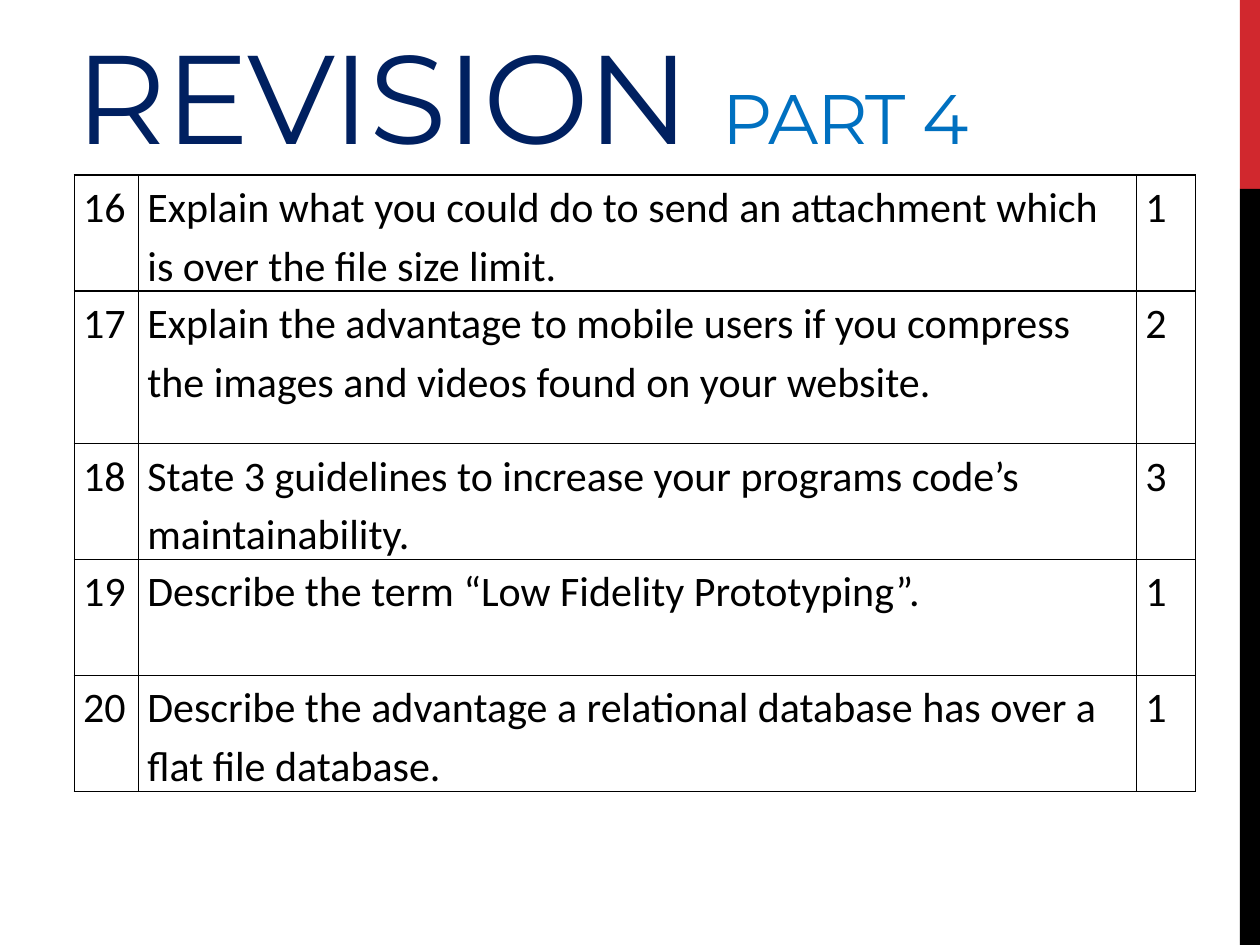
"""Build the fourth revision slide: a title, a side band and a question table."""
from typing import NamedTuple

from lxml import etree
from pptx import Presentation
from pptx import util as u
from pptx.dml.color import RGBColor
from pptx.enum import shapes, text
from pptx.oxml import ns

HUES = {"navy": "002060", "blue": "0070C0", "red": "D1282E", "black": "000000"}
WIDE, HIGH = u.Inches(10), u.Inches(7.5)
EDGE = 0.984
COLS = (0.51, 7.92, 0.47)
ROW = 0.92


class Band(NamedTuple):
    top: float
    share: float
    hue: str


class Part(NamedTuple):
    words: str
    size: int
    hue: str


class Task(NamedTuple):
    num: int
    words: str
    marks: int
    high: float = ROW


BANDS = (Band(0, 0.2, "red"), Band(0.2, 0.8, "black"))
TITLE = (Part("REVISION ", 72, "navy"), Part("PART 4", 40, "blue"))
TASKS = (
    Task(16, "Explain what you could do to send an attachment which is over the file size limit.", 1),
    Task(17, "Explain the advantage to mobile users if you compress the images and videos "
             "found on your website.", 2, 1.21),
    Task(18, "State 3 guidelines to increase your programs code’s maintainability.", 3),
    Task(19, "Describe the term “Low Fidelity Prototyping”.", 1),
    Task(20, "Describe the advantage a relational database has over a flat file database.", 1),
)


def style(run, face: str, size: int, hue: str) -> None:
    run.font.name = face
    run.font.size = u.Pt(size)
    run.font.color.rgb = RGBColor.from_string(HUES[hue])


def draw_band(slide, band: Band) -> None:
    box = slide.shapes.add_shape(
        shapes.MSO_SHAPE.RECTANGLE, int(EDGE * WIDE), int(band.top * HIGH),
        int((1 - EDGE) * WIDE), int(band.share * HIGH))
    box.shadow.inherit = False
    box.fill.solid()
    box.fill.fore_color.rgb = RGBColor.from_string(HUES[band.hue])
    box.line.fill.background()


def draw_title(slide, parts: tuple[Part, ...]) -> None:
    box = slide.shapes.add_textbox(
        int(0.05 * WIDE), u.Inches(0.05), int(0.859 * WIDE), u.Inches(1.3))
    frame = box.text_frame
    frame.word_wrap = True
    frame.vertical_anchor = text.MSO_ANCHOR.BOTTOM
    frame.margin_bottom = 0
    for part in parts:
        run = frame.paragraphs[0].add_run()
        run.text = part.words
        style(run, "Montserrat", part.size, part.hue)
        run.font._element.set("spc", "-60")


def add_rules(cell) -> None:
    props = cell._tc.get_or_add_tcPr()
    for at, side in enumerate(("lnL", "lnR", "lnT", "lnB")):
        line = etree.Element(ns.qn(f"a:{side}"), w=str(u.Pt(1)))
        fill = etree.SubElement(line, ns.qn("a:solidFill"))
        etree.SubElement(fill, ns.qn("a:srgbClr"), val=HUES["black"])
        props.insert(at, line)


def fill_cell(cell, words: str) -> None:
    cell.fill.background()
    cell.margin_left = cell.margin_right = u.Inches(0.07)
    cell.margin_top = cell.margin_bottom = 0
    cell.text_frame.text = words
    para = cell.text_frame.paragraphs[0]
    para.line_spacing = 1.15
    style(para.runs[0], "Calibri", 24, "black")
    add_rules(cell)


def draw_table(slide, tasks: tuple[Task, ...]) -> None:
    high = sum(task.high for task in tasks)
    grid = slide.shapes.add_table(
        len(tasks), len(COLS), u.Inches(0.59), u.Inches(1.39),
        u.Inches(sum(COLS)), u.Inches(high)).table
    grid.first_row = grid.horz_banding = False
    for col, wide in zip(grid.columns, COLS):
        col.width = u.Inches(wide)
    for row, task in zip(grid.rows, tasks):
        row.height = u.Inches(task.high)
        for cell, item in zip(row.cells, (task.num, task.words, task.marks)):
            fill_cell(cell, str(item))


def main() -> None:
    deck = Presentation()
    deck.slide_width, deck.slide_height = WIDE, HIGH
    slide = deck.slides.add_slide(deck.slide_layouts[6])
    for band in BANDS:
        draw_band(slide, band)
    draw_title(slide, TITLE)
    draw_table(slide, TASKS)
    deck.save("out.pptx")


if __name__ == "__main__":
    main()
